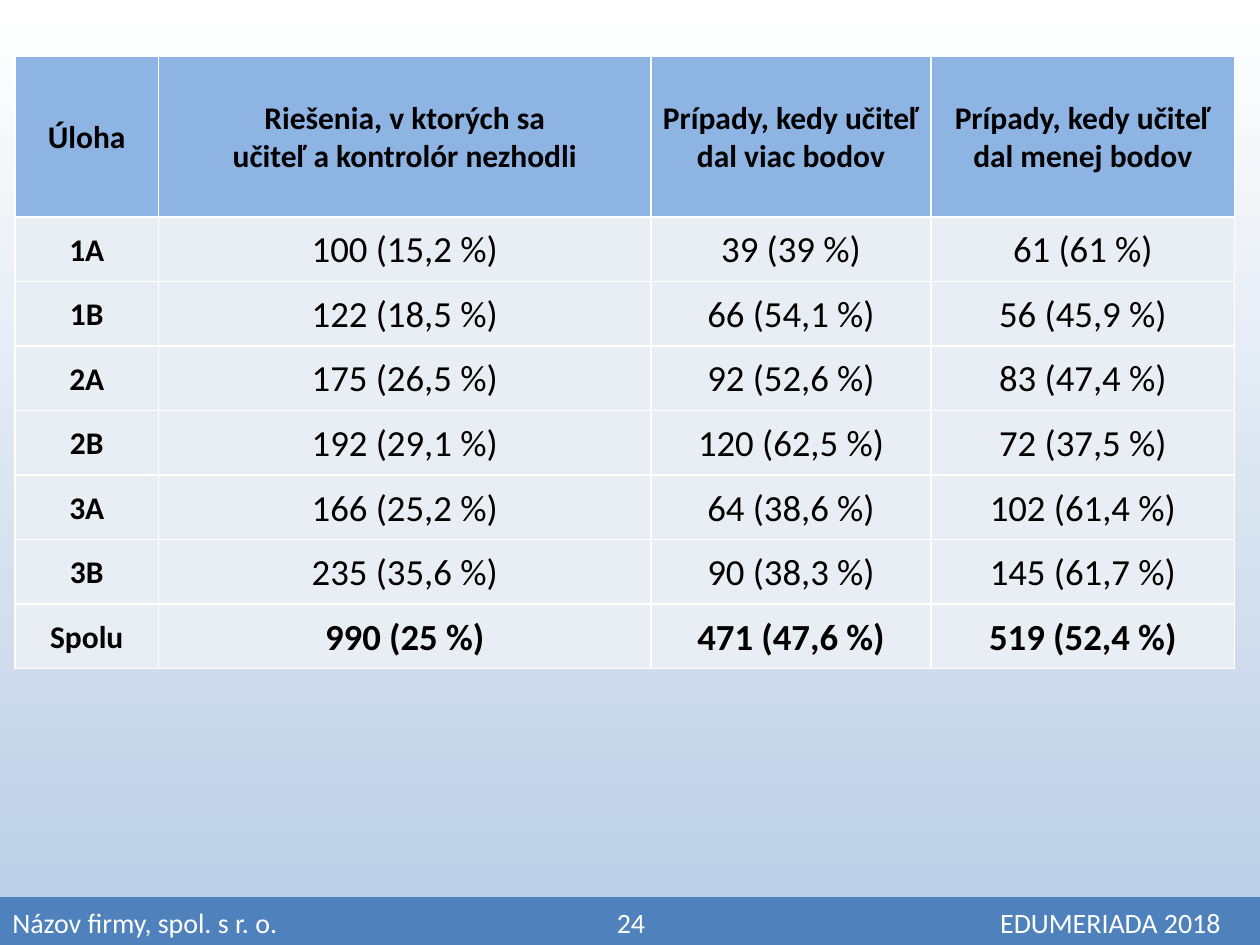
"""Build a slide with a table of marking disagreements and a footer bar."""
import lxml.etree
import pptx
import pptx.dml.color
import pptx.enum.shapes
import pptx.enum.text
import pptx.oxml.ns
import pptx.util

Pt = pptx.util.Pt
FONT = "Calibri"
COLUMN_WIDTHS = [82, 281.5, 160, 173.5]
HEADER_HEIGHT = 92
ROW_HEIGHT = 36.9
ROWS = [
    ["Úloha", "Riešenia, v ktorých sa\nučiteľ a kontrolór nezhodli",
     "Prípady, kedy učiteľ dal viac bodov", "Prípady, kedy učiteľ\ndal menej bodov"],
    ["1A", "100 (15,2 %)", "39 (39 %)", "61 (61 %)"],
    ["1B", "122 (18,5 %)", "66 (54,1 %)", "56 (45,9 %)"],
    ["2A", "175 (26,5 %)", "92 (52,6 %)", "83 (47,4 %)"],
    ["2B", "192 (29,1 %)", "120 (62,5 %)", "72 (37,5 %)"],
    ["3A", "166 (25,2 %)", "64 (38,6 %)", "102 (61,4 %)"],
    ["3B", "235 (35,6 %)", "90 (38,3 %)", "145 (61,7 %)"],
    ["Spolu", "990 (25 %)", "471 (47,6 %)", "519 (52,4 %)"],
]


def color(value):
    """Turn a hex string into a colour."""
    return pptx.dml.color.RGBColor.from_string(value)


def add_element(parent, tag, **attributes):
    """Append a DrawingML element to a parent."""
    return lxml.etree.SubElement(parent, pptx.oxml.ns.qn(tag), attributes)


def add_span(para, text, size, ink, bold=False):
    """Add one formatted run to a paragraph."""
    span = para.add_run()
    span.text = text
    span.font.name = FONT
    span.font.size = Pt(size)
    span.font.bold = bold
    span.font.color.rgb = color(ink)


def set_background(page, top, bottom):
    """Fill the page with a vertical gradient."""
    fill = page.background.fill
    fill.gradient()
    fill.gradient_angle = 270
    for stop, position, value in zip(fill.gradient_stops, (0, 1), (top, bottom)):
        stop.position = position
        stop.color.rgb = color(value)


def add_borders(cell, value):
    """Draw a one-point line on each side of a cell."""
    properties = cell._tc.get_or_add_tcPr()
    for side in ("a:lnL", "a:lnR", "a:lnT", "a:lnB"):
        line = add_element(properties, side, w=str(Pt(1)))
        add_element(add_element(line, "a:solidFill"), "a:srgbClr", val=value)


def fill_cell(cell, text, size, bold, background):
    """Style a table cell and write its centred text."""
    add_borders(cell, "FFFFFF")
    cell.fill.solid()
    cell.fill.fore_color.rgb = color(background)
    cell.margin_left = cell.margin_right = cell.margin_top = Pt(1.2)
    cell.margin_bottom = 0
    cell.vertical_anchor = pptx.enum.text.MSO_ANCHOR.MIDDLE
    para = cell.text_frame.paragraphs[0]
    para.alignment = pptx.enum.text.PP_ALIGN.CENTER
    for number, line in enumerate(text.split("\n")):
        if number:
            para.add_line_break()
        add_span(para, line, size, "000000", bold)


def add_results_table(page, left, top):
    """Add the table of disagreements per task."""
    heights = [HEADER_HEIGHT] + [ROW_HEIGHT] * (len(ROWS) - 1)
    frame = page.shapes.add_table(len(ROWS), len(COLUMN_WIDTHS), Pt(left), Pt(top),
                                  Pt(sum(COLUMN_WIDTHS)), Pt(sum(heights)))
    table = frame.table
    for column, width in zip(table.columns, COLUMN_WIDTHS):
        column.width = Pt(width)
    last = len(ROWS) - 1
    for row_number, texts in enumerate(ROWS):
        table.rows[row_number].height = Pt(heights[row_number])
        for column_number, text in enumerate(texts):
            heading = row_number == 0 or column_number == 0
            fill_cell(table.cell(row_number, column_number), text,
                      size=18 if heading else 21,
                      bold=heading or row_number == last,
                      background="8EB4E3" if row_number == 0 else "E9EDF4")


def add_footer(page, texts, top, height):
    """Add the footer bar with left, centred and right-aligned text."""
    box = page.shapes.add_shape(pptx.enum.shapes.MSO_SHAPE.RECTANGLE,
                                0, Pt(top), Pt(720), Pt(height))
    box.shadow.inherit = False
    box.fill.solid()
    box.fill.fore_color.rgb = color("4F81BD")
    box.line.fill.background()
    box.text_frame.word_wrap = True
    box.text_frame.vertical_anchor = pptx.enum.text.MSO_ANCHOR.BOTTOM
    para = box.text_frame.paragraphs[0]
    para.alignment = pptx.enum.text.PP_ALIGN.LEFT
    stops = add_element(para._p.get_or_add_pPr(), "a:tabLst")
    for position, alignment in ((353.5, "ctr"), (690.5, "r")):
        add_element(stops, "a:tab", pos=str(Pt(position)), algn=alignment)
    add_span(para, "\t".join(texts), 16, "FFFFFF")


def main():
    """Build and save the deck."""
    deck = pptx.Presentation()
    deck.slide_width, deck.slide_height = Pt(720), Pt(540)
    page = deck.slides.add_slide(deck.slide_layouts[6])
    set_background(page, "FFFFFF", "B9CDE5")
    add_results_table(page, 8.6, 32)
    add_footer(page, ["Názov firmy, spol. s r. o.", "24", "EDUMERIADA 2018"], 512.6, 27.4)
    deck.save("out.pptx")


if __name__ == "__main__":
    main()
